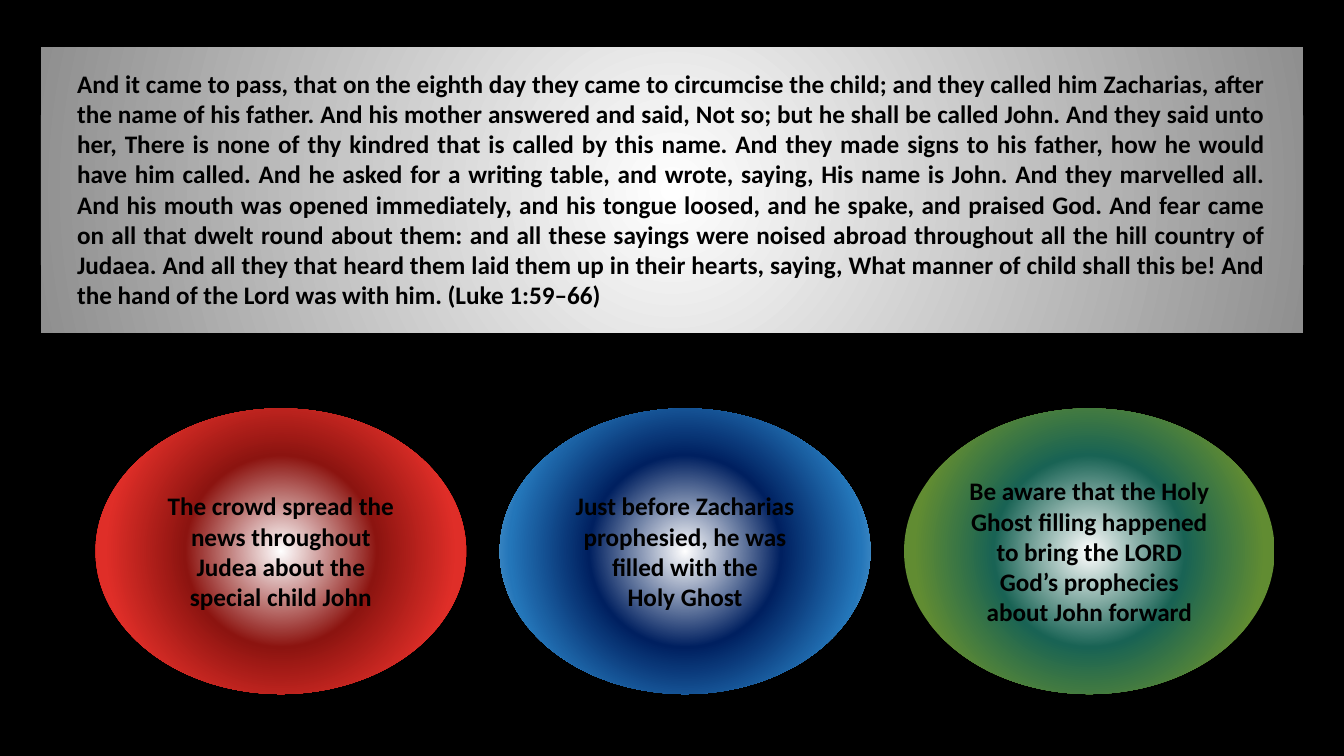
from pptx import Presentation, oxml
from pptx.dml import color as dml
from pptx.enum import shapes, text
from pptx.oxml import ns
from pptx.util import Pt

PX = 9525  # EMU per px, 96 px to the inch

# Sentences of the passage, joined into one paragraph
PASSAGE = [
    "And it came to pass, that on the eighth day they came to circumcise the child; "
    "and they called him Zacharias, after the name of his father.",
    "And his mother answered and said, Not so; but he shall be called John.",
    "And they said unto her, There is none of thy kindred that is called by this name.",
    "And they made signs to his father, how he would have him called.",
    "And he asked for a writing table, and wrote, saying, His name is John.",
    "And they marvelled all.",
    "And his mouth was opened immediately, and his tongue loosed, and he spake, "
    "and praised God.",
    "And fear came on all that dwelt round about them: and all these sayings were "
    "noised abroad throughout all the hill country of Judaea.",
    "And all they that heard them laid them up in their hearts, saying, "
    "What manner of child shall this be!",
    "And the hand of the Lord was with him. (Luke 1:59–66)",
]

SILVER = [(0, "979797"), (0, "FFFFFF"), (100, "8F8F8F")]

# Paragraphs of each oval, then its colours at 41, 75 and 100 percent
OVALS = [
    (["The crowd spread the news throughout Judea about the special child John"],
     ("8C1410", "DF2E28", "ED211A")),
    (["Just before Zacharias prophesied, he was filled with the", "Holy Ghost"],
     ("002060", "2476B9", "92C3EA")),
    (["Be aware that the Holy Ghost filling happened to bring the LORD "
      "God’s prophecies about John forward"],
     ("196354", "618C32", "618C32")),
]


def rgb(value):
    return dml.RGBColor.from_string(value)


def write(frame, paragraphs, align, size=18, color="000000", bold=True, font="Calibri"):
    frame.word_wrap = True
    for index, words in enumerate(paragraphs):
        paragraph = frame.add_paragraph() if index else frame.paragraphs[0]
        paragraph.alignment = align
        run = paragraph.add_run()
        run.text = words
        run.font.name = font
        run.font.size = Pt(size)
        run.font.bold = bold
        run.font.color.rgb = rgb(color)


def radial_fill(shape, stops):
    """Fill the shape with a circular gradient spreading from its centre."""
    stop_xml = "".join(
        f'<a:gs pos="{percent * 1000}"><a:srgbClr val="{value}"/></a:gs>'
        for percent, value in stops)
    gradient = oxml.parse_xml(
        f'<a:gradFill {ns.nsdecls("a")} rotWithShape="1"><a:gsLst>{stop_xml}</a:gsLst>'
        '<a:path path="circle"><a:fillToRect l="50000" t="50000" r="50000" b="50000"/>'
        '</a:path></a:gradFill>')
    shape.fill.background()
    properties = shape.element.spPr
    properties.replace(properties.find(ns.qn("a:noFill")), gradient)


class SlideBuilder:
    def __init__(self, slide, background):
        self.slide = slide
        slide.background.fill.solid()
        slide.background.fill.fore_color.rgb = rgb(background)

    def gradient_shape(self, kind, box, stops):
        shape = self.slide.shapes.add_shape(kind, *(length * PX for length in box))
        shape.shadow.inherit = False
        shape.line.fill.background()
        radial_fill(shape, stops)
        return shape

    def panel(self, box, stops):
        return self.gradient_shape(shapes.MSO_SHAPE.RECTANGLE, box, stops)

    def passage(self, box, sentences):
        frame = self.slide.shapes.add_textbox(*(length * PX for length in box)).text_frame
        write(frame, [" ".join(sentences)], text.PP_ALIGN.JUSTIFY)
        frame.auto_size = text.MSO_AUTO_SIZE.SHAPE_TO_FIT_TEXT

    def oval(self, box, paragraphs, stops):
        shape = self.gradient_shape(shapes.MSO_SHAPE.OVAL, box, stops)
        shape.text_frame.vertical_anchor = text.MSO_ANCHOR.MIDDLE
        write(shape.text_frame, paragraphs, text.PP_ALIGN.CENTER)


def main():
    presentation = Presentation()
    presentation.slide_width = 1280 * PX
    presentation.slide_height = 720 * PX
    blank_layout = presentation.slide_layouts[6]
    builder = SlideBuilder(presentation.slides.add_slide(blank_layout), "000000")

    # Scripture passage on its silver panel
    builder.panel((39, 45, 1202, 272), SILVER)
    builder.passage((64, 60, 1151, 242), PASSAGE)

    # Row of ovals
    for column, (paragraphs, colors) in enumerate(OVALS):
        stops = [(0, "000000"), (0, "FFFFFF"), *zip((41, 75, 100), colors)]
        builder.oval((91 + column * 385, 389, 353, 272), paragraphs, stops)

    presentation.save("out.pptx")


if __name__ == "__main__":
    main()
